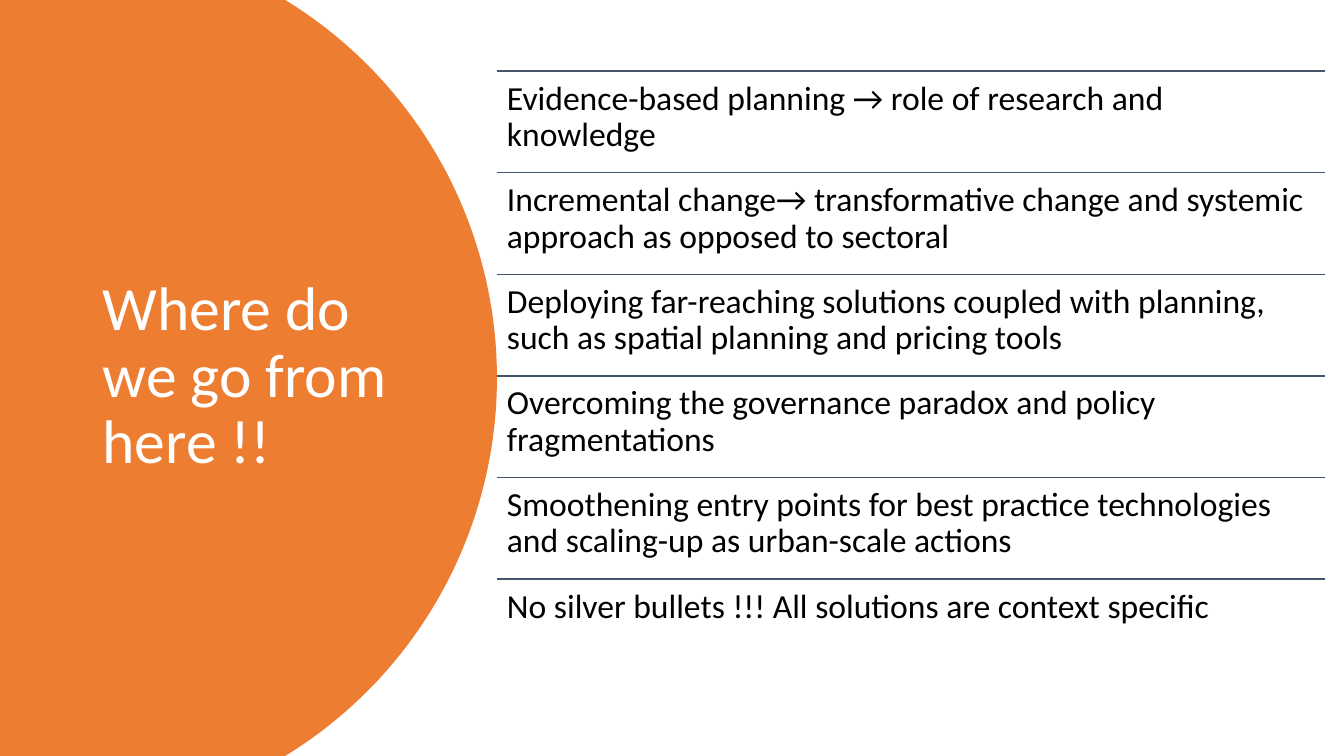
from dataclasses import dataclass
from math import asin, cos, sin

from lxml.etree import SubElement
from pptx import Presentation
from pptx.dml.color import RGBColor
from pptx.enum.shapes import MSO_CONNECTOR
from pptx.enum.text import MSO_ANCHOR, PP_ALIGN
from pptx.oxml.ns import qn
from pptx.slide import Slide
from pptx.util import Pt

ORANGE = RGBColor(0xED, 0x7D, 0x31)
SLATE = RGBColor(0x44, 0x54, 0x6A)
WHITE = RGBColor(0xFF, 0xFF, 0xFF)
BLACK = RGBColor(0x00, 0x00, 0x00)

WIDTH, HEIGHT = 960, 540
ARC_CENTER, ARC_RADIUS, ARC_STEPS = 38.4, 316.6, 120
LIST_LEFT, LIST_TOP, LIST_WIDTH, ROW_HEIGHT = 355, 50.8, 591.5, 72.55

POINTS = [
    "Evidence-based planning → role of research and knowledge",
    "Incremental change→ transformative change and systemic approach as opposed to sectoral",
    "Deploying far-reaching solutions coupled with planning, such as spatial planning and pricing tools",
    "Overcoming the governance paradox and policy fragmentations",
    "Smoothening entry points for best practice technologies and scaling-up as urban-scale actions",
    "No silver bullets !!! All solutions are context specific",
]


@dataclass
class Label:
    text: str
    left: float
    top: float
    width: float
    height: float
    size: float
    color: RGBColor
    anchor: MSO_ANCHOR = MSO_ANCHOR.TOP
    inset_x: float = 7.2
    inset_y: float = 7.2


def add_label(s: Slide, label: Label) -> None:
    sp = s.shapes.add_textbox(
        Pt(label.left), Pt(label.top), Pt(label.width), Pt(label.height))
    tf = sp.text_frame
    frame_format = {
        "word_wrap": True,
        "vertical_anchor": label.anchor,
        "margin_left": Pt(label.inset_x),
        "margin_right": Pt(label.inset_x),
        "margin_top": Pt(label.inset_y),
        "margin_bottom": Pt(label.inset_y),
    }
    for name, value in frame_format.items():
        setattr(tf, name, value)
    p = tf.paragraphs[0]
    p.alignment = PP_ALIGN.LEFT
    p.line_spacing = 0.9
    r = p.add_run()
    r.text = label.text
    for name, value in {"name": "Calibri", "size": Pt(label.size)}.items():
        setattr(r.font, name, value)
    r.font.color.rgb = label.color


def add_rule(s: Slide, top: float) -> None:
    line = s.shapes.add_connector(
        MSO_CONNECTOR.STRAIGHT,
        Pt(LIST_LEFT), Pt(top), Pt(LIST_LEFT + LIST_WIDTH), Pt(top))
    line.line.color.rgb = SLATE
    line.line.width = Pt(1)
    SubElement(line._element.spPr, qn("a:effectLst"))


def add_title_panel(s: Slide) -> None:
    half_angle = asin(HEIGHT / 2 / ARC_RADIUS)
    angles = [half_angle * (2 * i / ARC_STEPS - 1) for i in range(ARC_STEPS + 1)]
    arc = [(Pt(ARC_CENTER + ARC_RADIUS * cos(a)),
            Pt(HEIGHT / 2 + ARC_RADIUS * sin(a))) for a in angles]
    builder = s.shapes.build_freeform(0, 0)
    builder.add_line_segments([*arc, (0, Pt(HEIGHT))], close=True)
    sp = builder.convert_to_shape()
    sp.shadow.inherit = False
    sp.fill.solid()
    sp.fill.fore_color.rgb = ORANGE
    sp.line.fill.background()


def main() -> None:
    prs = Presentation()
    prs.slide_width, prs.slide_height = Pt(WIDTH), Pt(HEIGHT)
    s = prs.slides.add_slide(prs.slide_layouts[6])
    add_title_panel(s)
    add_label(s, Label("Where do we go from here !!", 66.2, 50.4, 232.6, 438.5,
                       44, WHITE, MSO_ANCHOR.MIDDLE, inset_y=3.6))
    for i, text in enumerate(POINTS):
        top = LIST_TOP + i * ROW_HEIGHT
        add_rule(s, top)
        add_label(s, Label(text, LIST_LEFT, top, LIST_WIDTH, ROW_HEIGHT, 24, BLACK))
    prs.save("out.pptx")


if __name__ == "__main__":
    main()
